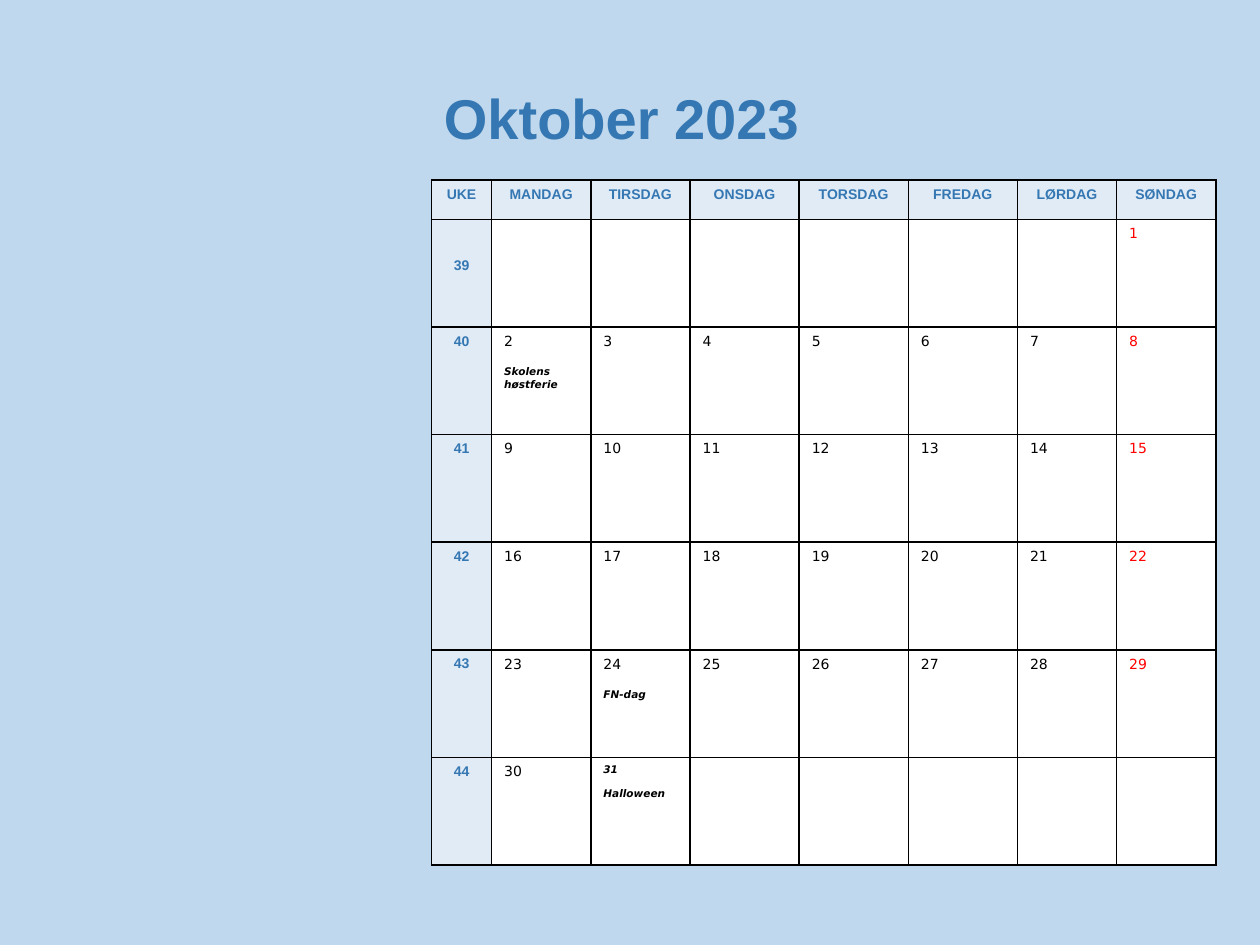
from lxml import etree
from pptx import Presentation
from pptx import util as u
from pptx.dml.color import RGBColor
from pptx.enum import text
from pptx.oxml.ns import qn

BLUE, PALE, SKY = "3477B2", "E0EBF6", "C0D8ED"
HEAD = {"name": "Arial", "size": u.Pt(8), "bold": True, "italic": False}
DAY = {"name": "DejaVu Sans", "size": u.Pt(8), "bold": False, "italic": False}
NOTE = {"name": "DejaVu Sans", "size": u.Pt(6), "bold": True, "italic": True}


def hue(code):
    return RGBColor.from_string(code)


def write(par, words, form, color):
    run = par.add_run()
    run.text = words
    for key, val in form.items():
        setattr(run.font, key, val)
    run.font.color.rgb = hue(color)


prs = Presentation()
prs.slide_width, prs.slide_height = u.Cm(25.4), u.Cm(19.05)
slide = prs.slides.add_slide(prs.slide_layouts[6])
back = slide.background.fill
back.solid()
back.fore_color.rgb = hue(SKY)

# Calendar grid
names = ["UKE", "MANDAG", "TIRSDAG", "ONSDAG", "TORSDAG", "FREDAG", "LØRDAG", "SØNDAG"]
wide = [1.21, 2, 2, 2.2, 2.2, 2.2, 2, 2]
high = [0.79] + [2.17] * 6
notes = {2: "Skolens høstferie", 24: "FN-dag", 31: "Halloween"}
grid = slide.shapes.add_table(len(high), len(wide), u.Cm(8.7), u.Cm(3.63),
                              u.Cm(sum(wide)), u.Cm(sum(high))).table
for col, size in zip(grid.columns, wide):
    col.width = u.Cm(size)
for row, size in zip(grid.rows, high):
    row.height = u.Cm(size)

for r in range(len(high)):
    for c in range(len(wide)):
        cell = grid.cell(r, c)
        label = r == 0 or c == 0
        cell.fill.solid()
        cell.fill.fore_color.rgb = hue(PALE if label else "FFFFFF")
        for i, side in enumerate(("lnL", "lnR", "lnT", "lnB")):
            line = etree.Element(qn("a:" + side), w=str(u.Pt(1)))
            fill = etree.SubElement(line, qn("a:solidFill"))
            etree.SubElement(fill, qn("a:srgbClr"), val="000000")
            cell._tc.get_or_add_tcPr().insert(i, line)

        par = cell.text_frame.paragraphs[0]
        if label:
            par.alignment = text.PP_ALIGN.CENTER
            write(par, names[c] if r == 0 else str(38 + r), HEAD, BLUE)
            continue
        day = 7 * (r - 1) + c - 6  # 1 October is the Sunday of the first week
        if not 1 <= day <= 31:
            continue
        write(par, str(day), NOTE if day == 31 else DAY, "FF0000" if c == 7 else "000000")
        if day in notes:
            par = cell.text_frame.add_paragraph()
            par.space_before = u.Pt(7 if day == 31 else 9.5)
            write(par, notes[day], NOTE, "000000")
grid.cell(1, 0).margin_top = u.Cm(0.77)

# Month title
box = slide.shapes.add_textbox(u.Cm(8.7), u.Cm(1.07), u.Cm(11.5), u.Cm(2.57))
frame = box.text_frame
frame.word_wrap = True
frame.vertical_anchor = text.MSO_ANCHOR.MIDDLE
write(frame.paragraphs[0], "Oktober 2023", {**HEAD, "size": u.Pt(32)}, BLUE)

prs.save("out.pptx")
